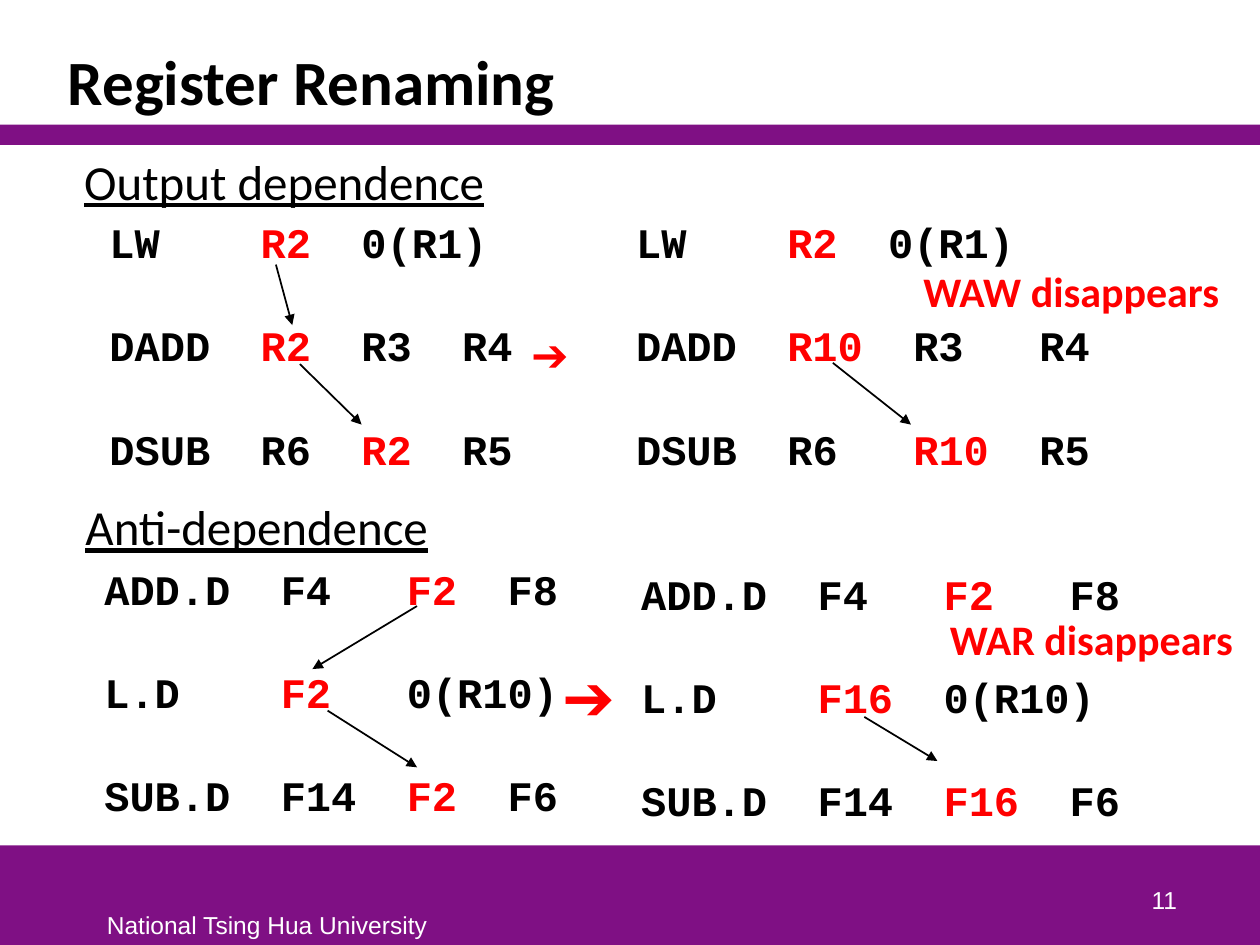
from lxml.etree import SubElement
from pptx import Presentation
from pptx.dml.color import RGBColor
from pptx.enum.shapes import MSO_CONNECTOR, MSO_SHAPE
from pptx.enum.text import MSO_ANCHOR, PP_ALIGN
from pptx.oxml.ns import qn
from pptx.util import Inches, Pt

PURPLE, RED, BLACK, WHITE = "7F1084", "FF0000", "000000", "FFFFFF"

BANDS = [(0.99, 0.16), (6.71, 0.79)]
HEADINGS = [
    ("Output dependence", 0.57, 1.15, 3.41),
    ("Anti-dependence", 0.58, 3.89, 2.95),
]
# Registers between bars are highlighted.
CODE = [
    (0.77, 1.67, 3.43, ["LW    |R2|  0(R1)", "DADD  |R2|  R3  R4", "DSUB  R6  |R2|  R5"]),
    (4.95, 1.67, 3.83, ["LW    |R2|  0(R1)", "DADD  |R10|  R3   R4", "DSUB  R6   |R10|  R5"]),
    (0.73, 4.42, 3.83, ["ADD.D  F4   |F2|  F8", "L.D    |F2|   0(R10)", "SUB.D  F14  |F2|  F6"]),
    (4.99, 4.46, 4.03, ["ADD.D  F4   |F2|   F8", "L.D    |F16|  0(R10)", "SUB.D  F14  |F16|  F6"]),
]
DEPENDENCES = [
    (2.19, 2.1, 2.32, 2.58),
    (2.38, 2.89, 2.87, 3.37),
    (6.61, 2.88, 7.23, 3.37),
    (3.31, 4.81, 2.48, 5.31),
    (2.6, 5.64, 3.31, 6.09),
    (6.86, 5.69, 7.44, 6.04),
]
RESULTS = [("WAW disappears", 7.23, 2.06, 2.57), ("WAR disappears", 7.44, 4.82, 2.47)]
BECOMES = [("Courier New", 4.12, 2.45), ("Calibri", 4.37, 5.17)]

prs = Presentation()
prs.slide_width, prs.slide_height = Inches(10), Inches(7.5)
s = prs.slides.add_slide(prs.slide_layouts[6])


def rgb(color):
    return RGBColor.from_string(color)


def add_text(lines, x, y, w, h, size=24, font="Calibri", color=BLACK, bold=False,
             underline=False, wrap=False, anchor=MSO_ANCHOR.TOP, align=PP_ALIGN.LEFT,
             gap=0, spacing=None):
    tf = s.shapes.add_textbox(Inches(x), Inches(y), Inches(w), Inches(h)).text_frame
    tf.word_wrap = wrap
    tf.vertical_anchor = anchor
    for i, line in enumerate(lines):
        p = tf.paragraphs[0] if i == 0 else tf.add_paragraph()
        p.alignment = align
        p.line_spacing = spacing
        if i:
            p.space_before = Pt(gap)
        for j, part in enumerate(line.split("|")):
            r = p.add_run()
            r.text = part
            r.font.size, r.font.name = Pt(size), font
            r.font.bold, r.font.underline = bold, underline
            r.font.color.rgb = rgb(RED if j % 2 else color)


def add_arrow(x1, y1, x2, y2):
    c = s.shapes.add_connector(MSO_CONNECTOR.STRAIGHT, Inches(x1), Inches(y1),
                               Inches(x2), Inches(y2))
    c.line.color.rgb = rgb(BLACK)
    c.line.width = Pt(1)
    SubElement(c.line._get_or_add_ln(), qn("a:tailEnd"), type="triangle")
    SubElement(c._element.spPr, qn("a:effectLst"))


for y, h in BANDS:
    sp = s.shapes.add_shape(MSO_SHAPE.RECTANGLE, 0, Inches(y), prs.slide_width, Inches(h))
    sp.shadow.inherit = False
    sp.fill.solid()
    sp.fill.fore_color.rgb = rgb(PURPLE)
    sp.line.fill.background()

add_text(["Register Renaming"], 0.44, 0.25, 8.97, 0.74, size=36, bold=True, wrap=True,
         anchor=MSO_ANCHOR.BOTTOM, spacing=0.85)
for text, x, y, w in HEADINGS:
    add_text([text], x, y, w, 0.57, size=28, underline=True)
for x, y, w, lines in CODE:
    add_text(lines, x, y, w, 2.12, font="Courier New", bold=True, gap=30.2)
for font, x, y in BECOMES:
    add_text(["➔"], x, y, 0.74, 0.71, size=36, font=font, color=RED)
for text, x, y, w in RESULTS:
    add_text([text], x, y, w, 0.5, color=RED, bold=True)
for ends in DEPENDENCES:
    add_arrow(*ends)
add_text(["National Tsing Hua University"], 0.75, 7.17, 2.76, 0.33, size=14, font="Arial",
         color=WHITE)
add_text(["11"], 7.36, 6.81, 2.08, 0.5, size=14, font="Arial", color=WHITE, wrap=True,
         anchor=MSO_ANCHOR.BOTTOM, align=PP_ALIGN.RIGHT)

prs.save("out.pptx")
